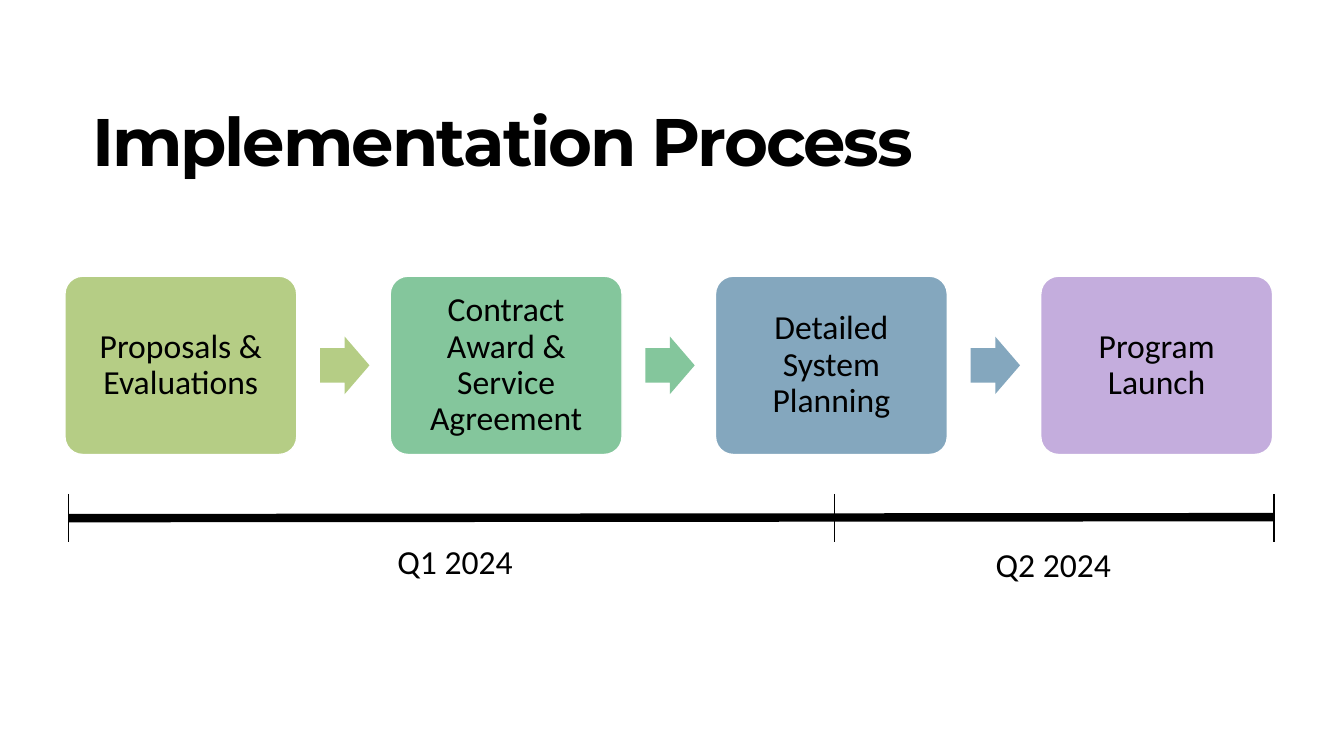
"""Build the Implementation Process slide: four steps above a two-quarter timeline."""
from pptx import Presentation
from pptx.dml.color import RGBColor
from pptx.enum.shapes import MSO_CONNECTOR as Connector, MSO_SHAPE as Shape
from pptx.enum.text import MSO_ANCHOR as Anchor, PP_ALIGN as Align
from pptx.oxml.ns import qn
from pptx.util import Pt

COLORS = {
    "black": "000000",
    "white": "FFFFFF",
    "lime": "B5CD85",
    "green": "84C69C",
    "blue": "84A7BE",
    "lilac": "C4ADDD",
}


def color(name):
    return RGBColor.from_string(COLORS[name])


def write(shape, text, size=24, font="Calibri", bold=False, align=Align.CENTER,
          anchor=Anchor.TOP, line_spacing=1.0, tracking=0, margins=(7.2, 3.6, 7.2, 3.6)):
    frame = shape.text_frame
    frame.word_wrap = True
    frame.vertical_anchor = anchor
    (frame.margin_left, frame.margin_top,
     frame.margin_right, frame.margin_bottom) = map(Pt, margins)
    paragraph = frame.paragraphs[0]
    paragraph.alignment = align
    paragraph.line_spacing = line_spacing
    run = paragraph.add_run()
    run.text = text
    run.font.size = Pt(size)
    run.font.name = font
    run.font.bold = bold
    run.font.color.rgb = color("black")
    if tracking:
        run.font._element.set("spc", str(int(tracking * 100)))


presentation = Presentation()
presentation.slide_width = Pt(960)
presentation.slide_height = Pt(540)
slide = presentation.slides.add_slide(presentation.slide_layouts[6])
shapes = slide.shapes

title = shapes.add_textbox(Pt(66), Pt(28.8), Pt(708.5), Pt(104.4))
write(title, "Implementation Process", size=48, font="Montserrat", bold=True,
      align=Align.LEFT, anchor=Anchor.BOTTOM, line_spacing=0.9, tracking=-1.5,
      margins=(0, 3.6, 7.2, 3.6))

steps = [
    ("Proposals & Evaluations", "lime"),
    ("Contract Award & Service Agreement", "green"),
    ("Detailed System Planning", "blue"),
    ("Program Launch", "lilac"),
]
step_left, step_pitch = 46.4, 232.35
for index, (label, fill) in enumerate(steps):
    left = step_left + index * step_pitch
    step = shapes.add_shape(Shape.ROUNDED_RECTANGLE, Pt(left), Pt(197.3), Pt(165.6), Pt(127.4))
    step.adjustments[0] = 0.1
    step.shadow.inherit = False
    step.fill.solid()
    step.fill.fore_color.rgb = color(fill)
    step.line.color.rgb = color("white")
    step.line.width = Pt(1)
    write(step, label, anchor=Anchor.MIDDLE, line_spacing=0.9, margins=(7.2,) * 4)
    if index < len(steps) - 1:
        arrow = shapes.add_shape(Shape.RIGHT_ARROW, Pt(left + 182.2), Pt(240.5), Pt(35.3), Pt(41))
        arrow.adjustments[0] = 0.6
        arrow.adjustments[1] = 0.5
        arrow.shadow.inherit = False
        arrow.fill.solid()
        arrow.fill.fore_color.rgb = color(fill)
        arrow.line.fill.background()

start, quarter_end, finish = 49, 596.2, 910.1
timeline = [(start, 370.1, finish, 369.4, 6)]
timeline += [(x, 352.8, x, 387.4, 1) for x in (start, quarter_end, finish)]
for x1, y1, x2, y2, width in timeline:
    line = shapes.add_connector(Connector.STRAIGHT, Pt(x1), Pt(y1), Pt(x2), Pt(y2))
    line.line.color.rgb = color("black")
    line.line.width = Pt(width)
    properties = line._element.spPr
    properties.append(properties.makeelement(qn("a:effectLst"), {}))

quarters = [("Q1 2024", 51.8, 383, 546.5), ("Q2 2024", 595.4, 385.2, 313.9)]
for label, left, top, width in quarters:
    quarter = shapes.add_textbox(Pt(left), Pt(top), Pt(width), Pt(36))
    write(quarter, label)

presentation.save("out.pptx")
